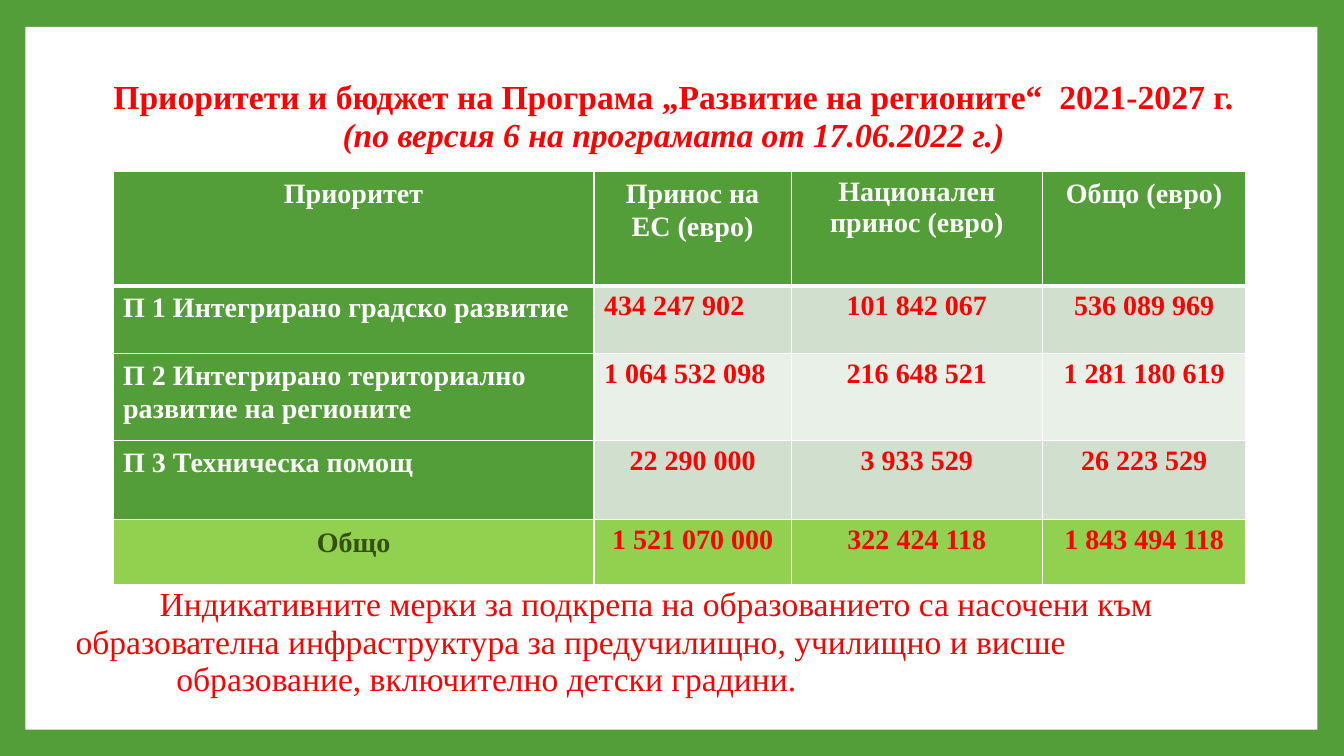
from pptx import Presentation
from pptx.dml.color import RGBColor
from pptx.enum.shapes import MSO_SHAPE
from pptx.enum.text import MSO_ANCHOR, PP_ALIGN
from pptx.oxml import parse_xml
from pptx.oxml.ns import nsdecls
from pptx.util import Cm, Pt

RECTANGLE = MSO_SHAPE.RECTANGLE
MIDDLE = MSO_ANCHOR.MIDDLE
LEFT, CENTER = PP_ALIGN.LEFT, PP_ALIGN.CENTER

GREEN, LIME, DARK_GREEN = "549E39", "92D050", "354F12"
WHITE, RED = "FFFFFF", "FF0000"
BANDS = ("D1DFCE", "E9F0E8")

TITLE = [
    "Приоритети и бюджет на Програма „Развитие на регионите“  2021-2027 г.",
    "(по версия 6 на програмата от 17.06.2022 г.)",
]
BUDGET = [
    ("Приоритет", "Принос на ЕС (евро)", "Национален принос (евро)", "Общо (евро)"),
    ("П 1 Интегрирано градско развитие", "434 247 902", "101 842 067", "536 089 969"),
    ("П 2 Интегрирано териториално развитие на регионите",
     "1 064 532 098", "216 648 521", "1 281 180 619"),
    ("П 3 Техническа помощ", "22 290 000", "3 933 529", "26 223 529"),
    ("Общо", "1 521 070 000", "322 424 118", "1 843 494 118"),
]
# Each paragraph of the note with its first-line indent in cm
NOTE = [
    ("Индикативните мерки за подкрепа на образованието са насочени към "
     "образователна инфраструктура за предучилищно, училищно и висше", 2.12),
    ("образование, включително детски градини.", 2.54),
]


def color(value):
    return RGBColor.from_string(value)


class BudgetSlide:
    font_name = "Times New Roman"
    text_size = 24
    table_size = 20

    def __init__(self, presentation):
        self.slide = presentation.slides.add_slide(presentation.slide_layouts[1])
        self.title = self.slide.shapes.title
        self.body = self.slide.placeholders[1]

    def style(self, paragraph, size, value, bold=False, italic=False):
        font = paragraph.font
        font.name, font.size = self.font_name, Pt(size)
        font.bold, font.italic = bold, italic
        font.color.rgb = color(value)

    def background(self, value):
        fill = self.slide.background.fill
        fill.solid()
        fill.fore_color.rgb = color(value)

    def panel(self, left, top, width, height, value):
        shape = self.slide.shapes.add_shape(
            RECTANGLE, Cm(left), Cm(top), Cm(width), Cm(height))
        shape.shadow.inherit = False
        shape.fill.solid()
        shape.fill.fore_color.rgb = color(value)
        shape.line.fill.background()
        self.title.element.addprevious(shape.element)

    def paragraphs(self, shape, box, texts):
        """Place a placeholder and return its paragraphs, ready for styling."""
        shape.left, shape.top, shape.width, shape.height = map(Cm, box)
        frame = shape.text_frame
        frame.word_wrap = True
        frame.vertical_anchor = MIDDLE
        frame.text = "\n".join(texts)
        for paragraph in frame.paragraphs:
            paragraph.line_spacing = 0.93
            paragraph.space_before = paragraph.space_after = Pt(0)
        return frame.paragraphs

    def heading(self, box, lines):
        for index, paragraph in enumerate(self.paragraphs(self.title, box, lines)):
            paragraph.alignment = CENTER
            self.style(paragraph, self.text_size, RED, bold=True, italic=index > 0)

    def note(self, box, items):
        paragraphs = self.paragraphs(self.body, box, [text for text, _ in items])
        for paragraph, (_, indent) in zip(paragraphs, items):
            paragraph.alignment = LEFT
            self.style(paragraph, self.text_size, RED)
            properties = paragraph._p.get_or_add_pPr()
            properties.set("marL", "0")
            properties.set("indent", str(Cm(indent)))
            bullet = parse_xml(f"<a:buNone {nsdecls('a')}/>")
            properties.find("{*}defRPr").addprevious(bullet)

    def borders(self, cell, header_side):
        """Draw white borders, thicker on the side that meets the header."""
        properties = cell._tc.get_or_add_tcPr()
        for side in "LRTB":
            width = Pt(3 if side == header_side else 1)
            properties.append(parse_xml(
                f'<a:ln{side} {nsdecls("a")} w="{width}"><a:solidFill>'
                f'<a:srgbClr val="{WHITE}"/></a:solidFill></a:ln{side}>'))

    def cell(self, cell, text, row, column, last_row):
        label = row == 0 or column == 0
        if row == last_row:
            fill, text_color = LIME, RED if column else DARK_GREEN
        elif label:
            fill, text_color = GREEN, WHITE
        else:
            fill, text_color = BANDS[(row - 1) % 2], RED
        self.borders(cell, {0: "B", 1: "T"}.get(row))
        cell.fill.solid()
        cell.fill.fore_color.rgb = color(fill)

        cell.text = text
        paragraph = cell.text_frame.paragraphs[0]
        left_aligned = (column == 0 and 0 < row < last_row) or (column == 1 and row in (1, 2))
        paragraph.alignment = LEFT if left_aligned else CENTER
        if label:
            paragraph.line_spacing = 1.0 if column == 2 else 1.07
            paragraph.space_before, paragraph.space_after = Pt(5), Pt(8)
        self.style(paragraph, self.table_size, text_color, bold=True)

    def table(self, left, top, widths, heights, rows):
        table = self.slide.shapes.add_table(
            len(rows), len(widths), Cm(left), Cm(top),
            Cm(sum(widths)), Cm(sum(heights))).table
        for column, width in zip(table.columns, widths):
            column.width = Cm(width)
        for row, height in zip(table.rows, heights):
            row.height = Cm(height)
        for row, texts in enumerate(rows):
            for column, text in enumerate(texts):
                self.cell(table.cell(row, column), text, row, column, len(rows) - 1)


def main():
    presentation = Presentation()
    presentation.slide_width, presentation.slide_height = Cm(33.87), Cm(19.05)
    budget = BudgetSlide(presentation)

    # Green frame around a white panel
    budget.background(GREEN)
    budget.panel(0.64, 0.68, 32.56, 17.71, WHITE)

    # Heading, budget table and closing note
    budget.heading((1.65, 1.9, 30.64, 2.1), TITLE)
    budget.table(2.85, 4.32, (12.12, 4.97, 6.33, 5.13),
                 (2.88, 1.7, 2.2, 2.0, 1.63), BUDGET)
    budget.note((1.65, 14.75, 30.64, 2.9), NOTE)

    presentation.save("out.pptx")


if __name__ == "__main__":
    main()
